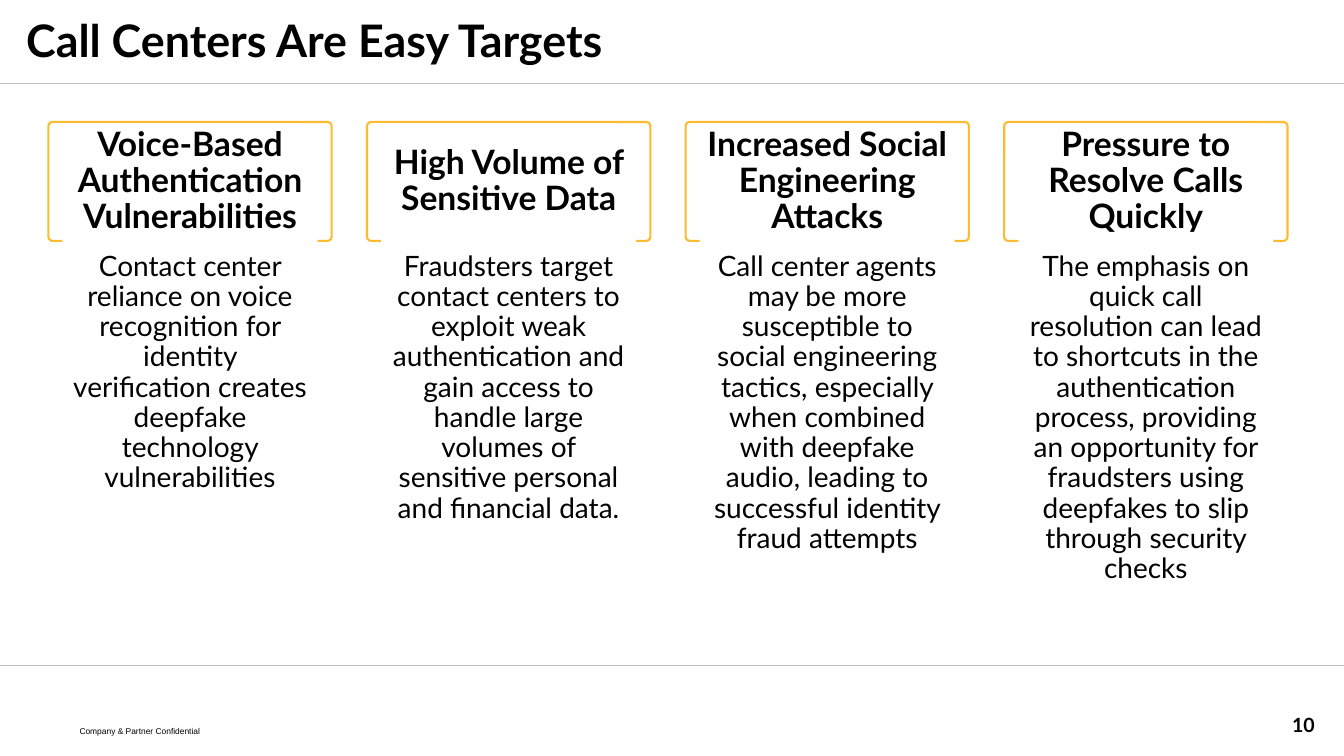
from pptx import Presentation
from pptx.dml.color import RGBColor as Rgb
from pptx.enum.shapes import MSO_CONNECTOR as Conn, MSO_SHAPE as Form
from pptx.enum.text import MSO_ANCHOR as Anchor, MSO_AUTO_SIZE as Fit, PP_ALIGN as Align
from pptx.oxml.ns import qn
from pptx.util import Pt
from lxml.etree import SubElement

PX = 9144
WIDE, HIGH = 1333, 750
HUES = {"ink": "000000", "rule": "BFBFBF", "gold": "FDBB30", "paper": "FFFFFF"}
LEFT, PITCH = 48, 316

CARDS = [
    ("Voice-Based Authentication Vulnerabilities",
     "Contact center reliance on voice recognition for identity verification "
     "creates deepfake technology vulnerabilities"),
    ("High Volume of Sensitive Data",
     "Fraudsters target contact centers to exploit weak authentication and gain "
     "access to handle large volumes of sensitive personal and financial data."),
    ("Increased Social Engineering Attacks",
     "Call center agents may be more susceptible to social engineering tactics, "
     "especially when combined with deepfake audio, leading to successful "
     "identity fraud attempts"),
    ("Pressure to Resolve Calls Quickly",
     "The emphasis on quick call resolution can lead to shortcuts in the "
     "authentication process, providing an opportunity for fraudsters using "
     "deepfakes to slip through security checks"),
]


def hue(name):
    return Rgb.from_string(HUES[name])


class Deck:
    def __init__(self):
        self.show = Presentation()
        self.show.slide_width = WIDE * PX
        self.show.slide_height = HIGH * PX
        self.slide = self.show.slides.add_slide(self.show.slide_layouts[5])
        self.shapes = self.slide.shapes

    def words(self, shape, text, size, bold=False, align=Align.LEFT,
              anchor=Anchor.TOP, inset=(10, 5, 10, 5), space=1.0, font="Lato"):
        frame = shape.text_frame
        frame.text = text
        frame.word_wrap = True
        frame.auto_size = Fit.NONE
        frame.vertical_anchor = anchor
        (frame.margin_left, frame.margin_top,
         frame.margin_right, frame.margin_bottom) = (n * PX for n in inset)
        para = frame.paragraphs[0]
        para.alignment = align
        para.line_spacing = space
        para.space_before = Pt(0)
        para.font.name = font
        para.font.size = Pt(size)
        para.font.bold = bold
        para.font.color.rgb = hue("ink")

    def title(self, box, text):
        shape = self.shapes.title
        shape.left, shape.top, shape.width, shape.height = (n * PX for n in box)
        self.words(shape, text, 32, bold=True, anchor=Anchor.MIDDLE, space=0.9)

    def label(self, box, text, size, **style):
        shape = self.shapes.add_textbox(*(n * PX for n in box))
        self.words(shape, text, size, **style)

    def rule(self, y):
        line = self.shapes.add_connector(Conn.STRAIGHT, 0, y * PX, WIDE * PX, y * PX)
        line.line.color.rgb = hue("rule")
        line.line.width = Pt(1)
        SubElement(line._element.spPr, qn("a:effectLst"))

    def head(self, box, text):
        shape = self.shapes.add_shape(Form.ROUNDED_RECTANGLE, *(n * PX for n in box))
        shape.adjustments[0] = 0.035
        shape.shadow.inherit = False
        shape.fill.background()
        shape.line.color.rgb = hue("gold")
        shape.line.width = Pt(1.5)
        self.words(shape, text, 24, bold=True, align=Align.CENTER,
                   anchor=Anchor.MIDDLE, inset=(0, 0, 0, 0), space=0.9)

    def body(self, box, text):
        shape = self.shapes.add_shape(Form.RECTANGLE, *(n * PX for n in box))
        shape.shadow.inherit = False
        shape.fill.solid()
        shape.fill.fore_color.rgb = hue("paper")
        shape.line.fill.background()
        self.words(shape, text, 20, align=Align.CENTER,
                   inset=(10, 20, 10, 5), space=0.9)


def main():
    deck = Deck()
    deck.label((69, 715, 405, 26), "Company & Partner Confidential", 6, font="Arial")
    for y in (83, 660):
        deck.rule(y)
    deck.title((16, 11, 1272, 63), "Call Centers Are Easy Targets")
    for i, (head, body) in enumerate(CARDS):
        x = LEFT + i * PITCH
        deck.head((x, 121, 281, 118), head)
        deck.body((x + 14, 230, 253, 412), body)
    deck.label((1014, 699, 300, 40), "10", 14, bold=True,
               align=Align.RIGHT, anchor=Anchor.MIDDLE)
    deck.show.save("out.pptx")


if __name__ == "__main__":
    main()
